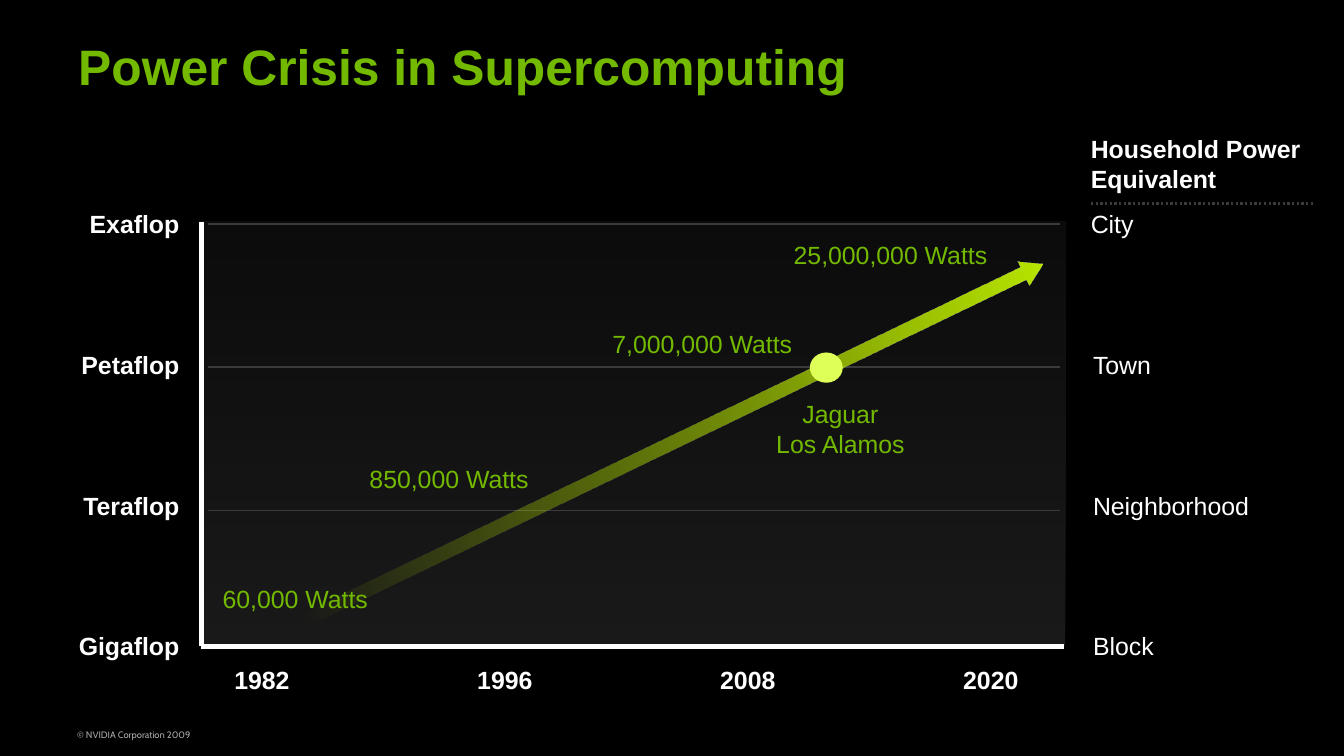
import pptx
import pptx.dml.color
import pptx.enum.dml
import pptx.enum.shapes
import pptx.enum.text
import pptx.util
from lxml import etree
from pptx.oxml.ns import qn

Cm = pptx.util.Cm
ALIGN = pptx.enum.text.PP_ALIGN
SHAPE = pptx.enum.shapes.MSO_SHAPE

GREEN = "73B900"
WHITE = "FFFFFF"
GRID = "3B3B3B"
ARROW = "B9E700"
MARKER = "DEFF58"

LABEL_HEIGHT = 0.94
LEVEL_STEP = 3.19
# level, label width, household equivalent, equivalent width
LEVELS = [
    ("Exaflop", 2.57, "City", 1.5),
    ("Petaflop", 2.77, "Town", 1.83),
    ("Teraflop", 2.72, "Neighborhood", 4.09),
    ("Gigaflop", 2.82, "Block", 1.9),
]
YEARS = ["1982", "1996", "2008", "2020"]
# text, offset from the plot's corner, width
WATTS = [
    ("7,000,000 Watts", 9.09, 2.29, 6.55),
    ("25,000,000 Watts", 13.2, 0.28, 6.55),
    ("850,000 Watts", 3.58, 5.36, 5.74),
    ("60,000 Watts", 0.25, 8.08, 4.9),
]


def color(value):
    return pptx.dml.color.RGBColor.from_string(value)


def format_text(shape, text, size=16, font="Arial", fill=WHITE, bold=False,
                align=ALIGN.LEFT, wrap=False):
    frame = shape.text_frame
    frame.text = text
    frame.word_wrap = wrap
    frame.auto_size = pptx.enum.text.MSO_AUTO_SIZE.SHAPE_TO_FIT_TEXT
    frame.vertical_anchor = pptx.enum.text.MSO_ANCHOR.TOP
    for paragraph in frame.paragraphs:
        paragraph.alignment = align
        paragraph.font.size = pptx.util.Pt(size)
        paragraph.font.name = font
        paragraph.font.bold = bold
        paragraph.font.color.rgb = color(fill)


def add_text(slide, text, left, top, width, height=LABEL_HEIGHT, **formatting):
    shape = slide.shapes.add_textbox(Cm(left), Cm(top), Cm(width), Cm(height))
    format_text(shape, text, **formatting)


def add_line(slide, start, end, stroke, width, dash=None):
    line = slide.shapes.add_connector(
        pptx.enum.shapes.MSO_CONNECTOR.STRAIGHT, *map(Cm, start + end))
    line.line.color.rgb = color(stroke)
    line.line.width = pptx.util.Pt(width)
    if dash:
        line.line.dash_style = dash
    etree.SubElement(line.element.spPr, qn("a:effectLst"))


def add_shape(slide, kind, left, top, width, height):
    shape = slide.shapes.add_shape(kind, Cm(left), Cm(top), Cm(width), Cm(height))
    shape.shadow.inherit = False
    shape.line.fill.background()
    return shape


def set_gradient(shape, angle, stops):
    """Fill with two (colour, opacity percent) stops."""
    shape.fill.gradient()
    shape.fill.gradient_angle = angle
    for position, (stop, (value, _)) in enumerate(zip(shape.fill.gradient_stops, stops)):
        stop.position = position
        stop.color.rgb = color(value)
    tints = shape.element.spPr.iter(qn("a:srgbClr"))
    for tint, (_, opacity) in zip(tints, stops):
        etree.SubElement(tint, qn("a:alpha"), val=str(opacity * 1000))


def add_title(slide, left, top, width, height):
    title = slide.shapes.title
    title.left, title.top, title.width, title.height = map(
        Cm, (left, top, width, height))
    format_text(title, "Power Crisis in Supercomputing", size=32, fill=GREEN,
                bold=True, wrap=True)


def add_plot(slide, left, top, width, height):
    """Panel, axes and their labels."""
    bottom, right = top + height, left + width
    panel = add_shape(slide, SHAPE.RECTANGLE, left, top, width, height)
    set_gradient(panel, 90, [("808080", 20), (GRID, 20)])
    add_line(slide, (left + 0.02, top), (left + 0.02, bottom), WHITE, 3)
    add_line(slide, (left + 0.02, bottom), (right - 0.03, bottom), WHITE, 3)
    for index, year in enumerate(YEARS):
        add_text(slide, year, left + 0.5 + 5.51 * index, bottom + 0.3, 1.78,
                 bold=True, align=ALIGN.CENTER)
    for index, (level, label_width, _, _) in enumerate(LEVELS):
        add_text(slide, level, left - 0.23 - label_width,
                 top - 0.41 + LEVEL_STEP * index, label_width,
                 bold=True, align=ALIGN.RIGHT)
    for index in range(len(LEVELS) - 1):
        y = top + 0.05 + 3.25 * index
        add_line(slide, (left + 0.17, y), (right - 0.13, y), GRID, 1)


def add_equivalents(slide, left, top, width):
    """Household column with its heading and dotted rule."""
    add_text(slide, "Household Power\nEquivalent", left, top, width, 1.63, bold=True)
    rule = top + 1.72
    add_line(slide, (left + 0.25, rule), (left + 5.33, rule), GRID, 1.5,
             pptx.enum.dml.MSO_LINE.ROUND_DOT)
    for index, (_, _, place, place_width) in enumerate(LEVELS):
        indent = 0.05 if index else 0
        add_text(slide, place, left + indent, rule + LEVEL_STEP * index, place_width)


def add_trend(slide, left, top):
    """Fading arrow, power figures and the marked machine."""
    arrow = add_shape(slide, SHAPE.RIGHT_ARROW, left + 1.39, top + 4.7, 18.62, 0.61)
    arrow.adjustments[0] = 0.5
    arrow.adjustments[1] = 0.81
    arrow.rotation = 334.2
    set_gradient(arrow, 0, [(ARROW, 0), (ARROW, 100)])
    for text, x, y, width in WATTS:
        add_text(slide, text, left + x, top + y, width, fill=GREEN, wrap=True)
    add_text(slide, "Jaguar\nLos Alamos", left + 12.77, top + 3.89, 3.48, 1.63,
             fill=GREEN, align=ALIGN.CENTER)
    marker = add_shape(slide, SHAPE.OVAL, left + 13.87, top + 3.02, 0.64, 0.58)
    marker.fill.solid()
    marker.fill.fore_color.rgb = color(MARKER)
    marker.line.color.rgb = color(MARKER)
    marker.line.width = pptx.util.Pt(3)


def main():
    presentation = pptx.Presentation()
    presentation.slide_width = Cm(30.48)
    presentation.slide_height = Cm(17.15)
    slide = presentation.slides.add_slide(presentation.slide_layouts[5])
    slide.background.fill.solid()
    slide.background.fill.fore_color.rgb = color("000000")

    add_text(slide, "© NVIDIA Corporation 2009", 1.5, 16.41, 3.18, 0.51,
             size=6, font="Cabin", fill="AAAAAA")
    add_title(slide, 1.52, 0.69, 25.58, 1.6)
    add_plot(slide, 4.55, 5.03, 19.61, 9.63)
    add_equivalents(slide, 24.49, 2.9, 5.49)
    add_trend(slide, 4.55, 5.03)
    presentation.save("out.pptx")


if __name__ == "__main__":
    main()
